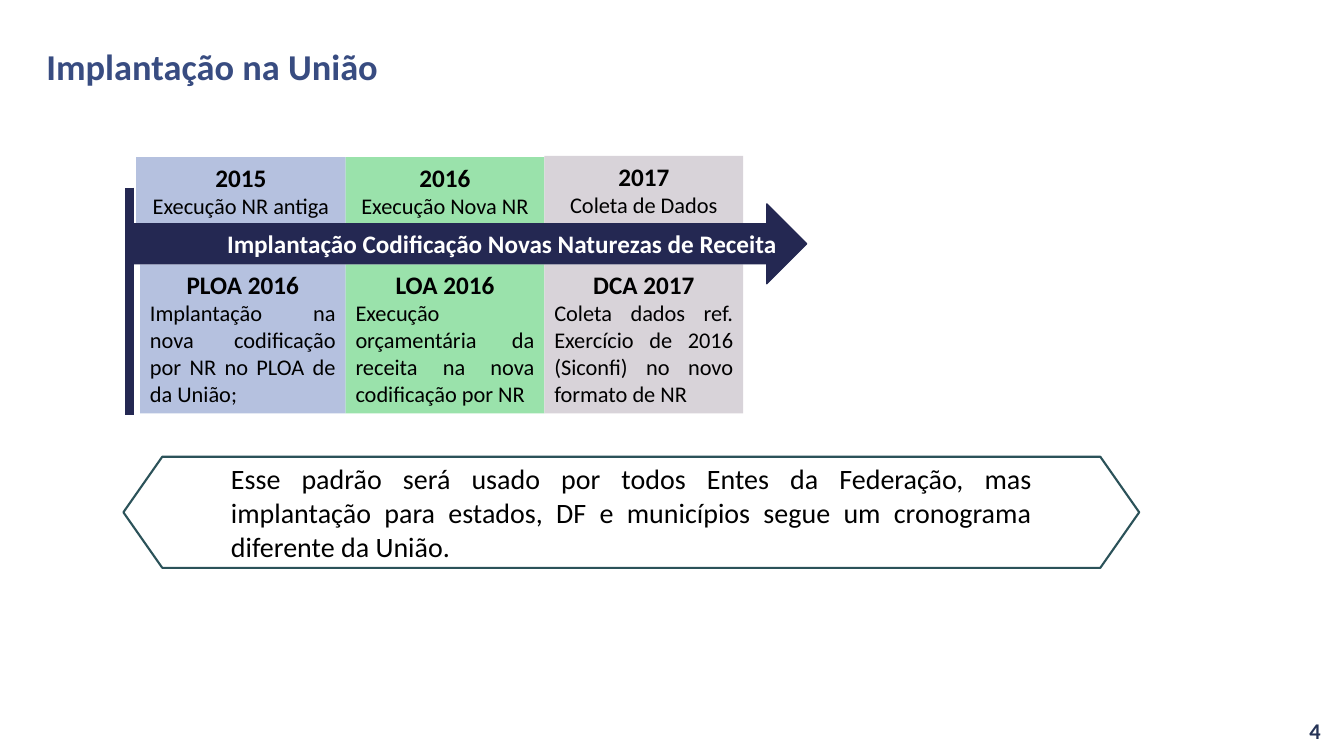
from dataclasses import dataclass

from lxml import etree
from pptx import Presentation
from pptx.dml.color import RGBColor
from pptx.enum.shapes import MSO_CONNECTOR, MSO_SHAPE
from pptx.enum.text import MSO_ANCHOR, PP_ALIGN
from pptx.oxml.ns import qn
from pptx.util import Cm, Pt

LEFT, CENTER, RIGHT, JUSTIFY = PP_ALIGN.LEFT, PP_ALIGN.CENTER, PP_ALIGN.RIGHT, PP_ALIGN.JUSTIFY
TOP, MIDDLE = MSO_ANCHOR.TOP, MSO_ANCHOR.MIDDLE
RECTANGLE, ARROW, HEXAGON = MSO_SHAPE.RECTANGLE, MSO_SHAPE.RIGHT_ARROW, MSO_SHAPE.HEXAGON
STRAIGHT = MSO_CONNECTOR.STRAIGHT


@dataclass(frozen=True)
class Theme:
    font: str = "Calibri"
    black: str = "000000"
    white: str = "FFFFFF"
    title: str = "384C81"
    number: str = "253356"
    navy: str = "242852"
    teal: str = "2B5259"
    blue: str = "B5C1DF"
    green: str = "9AE2AB"
    grey: str = "D8D3D9"
    title_size: int = 26
    note_size: int = 20
    heading_size: int = 18
    body_size: int = 16


THEME = Theme()

presentation = Presentation()
presentation.slide_width, presentation.slide_height = Cm(33.87), Cm(19.05)
slide = presentation.slides.add_slide(presentation.slide_layouts[6])


def add_text(shape, text, size=THEME.body_size, color=THEME.black, bold=False,
             align=LEFT, anchor=TOP, line_spacing=None):
    """Fill the empty first paragraph of the shape, or append a new one."""
    frame = shape.text_frame
    frame.word_wrap = True
    frame.vertical_anchor = anchor
    paragraph = frame.add_paragraph() if frame.text else frame.paragraphs[0]
    paragraph.alignment = align
    paragraph.line_spacing = line_spacing
    run = paragraph.add_run()
    run.text = text
    run.font.name, run.font.size, run.font.bold = THEME.font, Pt(size), bold
    run.font.color.rgb = RGBColor.from_string(color)


def add_block(kind, left, top, width, height, fill, line=None, line_width=1):
    shape = slide.shapes.add_shape(kind, Cm(left), Cm(top), Cm(width), Cm(height))
    shape.shadow.inherit = False
    shape.fill.solid()
    shape.fill.fore_color.rgb = RGBColor.from_string(fill)
    if line:
        shape.line.color.rgb = RGBColor.from_string(line)
        shape.line.width = Pt(line_width)
    else:
        shape.line.fill.background()
    return shape


# Title and page number
page_number = slide.shapes.add_textbox(Cm(25.91), Cm(17.91), Cm(7.62), Cm(1.02))
add_text(page_number, "4", color=THEME.number, bold=True, align=RIGHT, anchor=MIDDLE)
title = slide.shapes.add_textbox(Cm(0.92), Cm(1.13), Cm(29.82), Cm(1.22))
add_text(title, "Implantação na União", size=THEME.title_size, color=THEME.title,
         bold=True, anchor=MIDDLE, line_spacing=0.9)

# Years above the arrow and budget stages below it; right edges line up by column
columns = [
    (8.71, THEME.blue,
     (5.28, 3.96, "2015", "Execução NR antiga"),
     (5.18, "PLOA 2016", "Implantação na nova codificação por NR no PLOA de da União;")),
    (13.72, THEME.green,
     (5.01, 3.96, "2016", "Execução Nova NR"),
     (5.01, "LOA 2016", "Execução orçamentária da receita na nova codificação por NR")),
    (18.73, THEME.grey,
     (5.01, 3.93, "2017", "Coleta de Dados"),
     (5.01, "DCA 2017", "Coleta dados ref. Exercício de 2016 (Siconfi) no novo formato de NR")),
]
for right, color, (year_width, year_top, year, action), (stage_width, stage, detail) in columns:
    blocks = [
        (year_width, year_top, 1.71, year, action, CENTER),
        (stage_width, 6.66, 3.76, stage, detail, JUSTIFY),
    ]
    for width, top, height, heading, body, align in blocks:
        block = add_block(RECTANGLE, right - width, top, width, height, color)
        add_text(block, heading, size=THEME.heading_size, bold=True, align=CENTER)
        add_text(block, body, align=align)

# Timeline
start_line = slide.shapes.add_connector(STRAIGHT, Cm(3.26), Cm(4.73), Cm(3.26), Cm(10.46))
start_line.line.color.rgb = RGBColor.from_string(THEME.navy)
start_line.line.width = Pt(6)
etree.SubElement(start_line.element.spPr, qn("a:effectLst"))
timeline = add_block(ARROW, 3.26, 5.14, 17.07, 2.01, THEME.navy, line=THEME.navy)
add_text(timeline, "Implantação Codificação Novas Naturezas de Receita", size=THEME.heading_size,
         color=THEME.white, bold=True, align=RIGHT, anchor=MIDDLE)

# Note
note = add_block(HEXAGON, 3.11, 11.51, 25.6, 2.8, THEME.white, line=THEME.teal, line_width=1.5)
note.adjustments[0] = 0.35
add_text(note, "Esse padrão será usado por todos Entes da Federação, mas implantação para estados, "
         "DF e municípios segue um cronograma diferente da União.",
         size=THEME.note_size, align=JUSTIFY, anchor=MIDDLE)

presentation.save("out.pptx")
